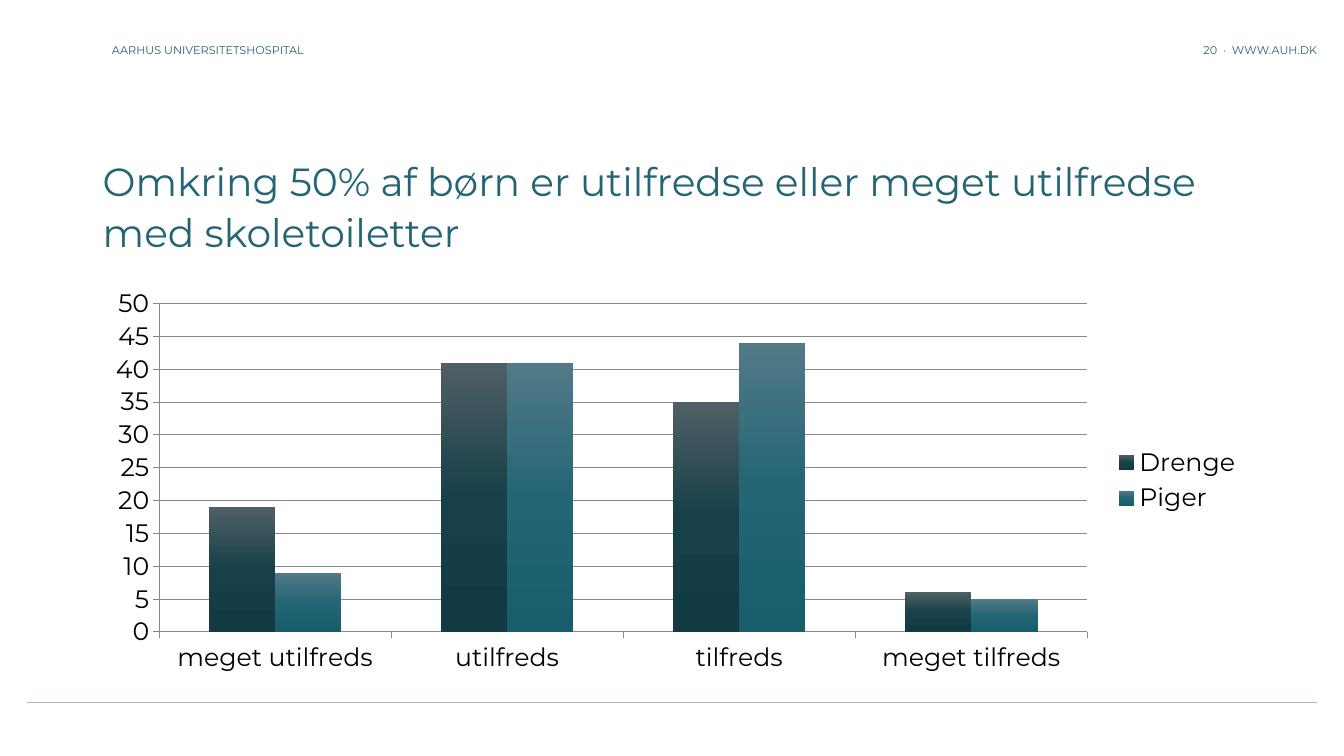
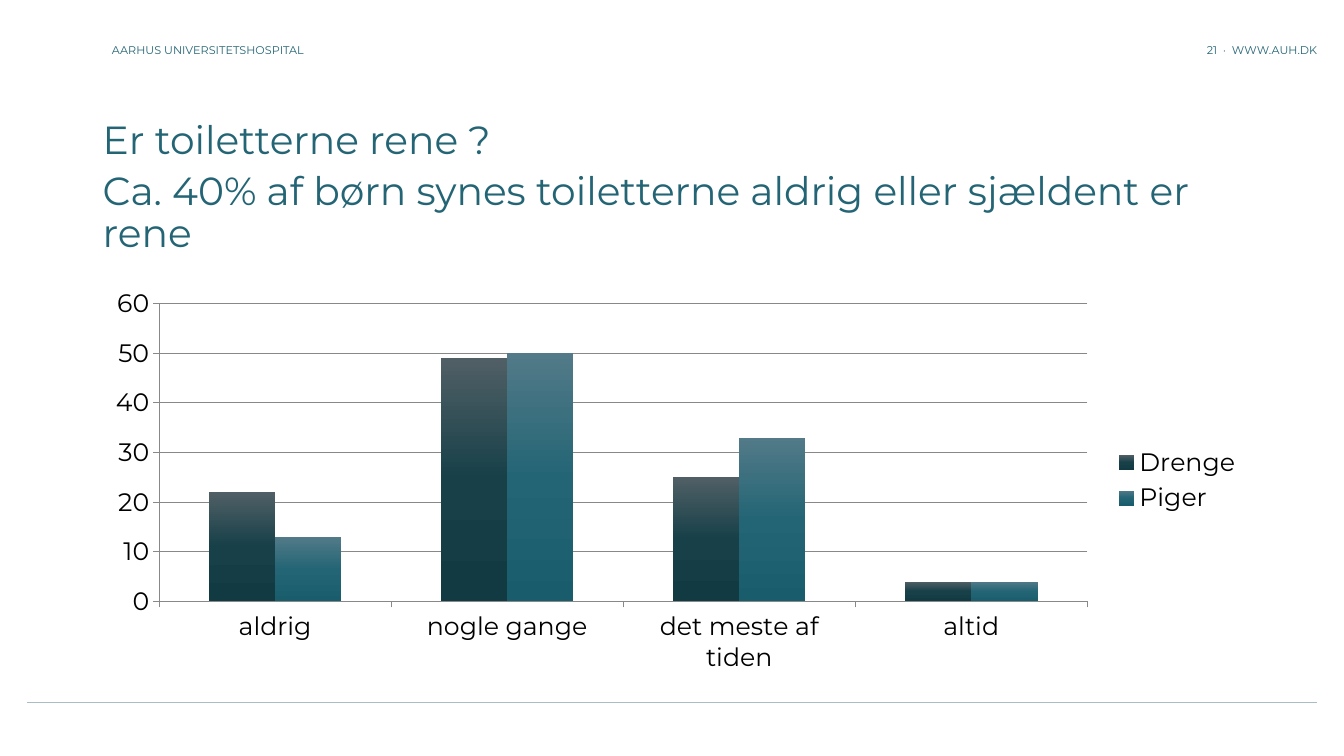
from lxml import etree
from pptx import Presentation
from pptx.chart.data import CategoryChartData
from pptx.dml.color import RGBColor
from pptx.enum.chart import XL_CHART_TYPE as ChartType, XL_LEGEND_POSITION as LegendPosition, XL_TICK_MARK as TickMark
from pptx.enum.shapes import MSO_CONNECTOR as Connector
from pptx.enum.text import MSO_ANCHOR as Anchor, MSO_AUTO_SIZE as AutoSize, PP_ALIGN as Align
from pptx.oxml import parse_xml
from pptx.oxml.ns import nsdecls, qn
from pptx.util import Pt

FONT = "Montserrat"
COLORS = {"teal": "246575", "rule": "A9BEC4", "grid": "888888", "text": "000000"}
GRADIENTS = {
    "Drenge": ("505F65", "174049", "113A43"),
    "Piger": ("527A88", "246575", "195D6C"),
}
SLIDES = [
    {
        "number": 20,
        "title": ["Omkring 50% af børn er utilfredse eller meget utilfredse",
                  "med skoletoiletter"],
        "categories": ["meget utilfreds", "utilfreds", "tilfreds", "meget tilfreds"],
        "values": {"Drenge": [19, 41, 35, 6], "Piger": [9, 41, 44, 5]},
        "maximum": 50,
        "step": 5,
    },
    {
        "number": 21,
        "title": ["Er toiletterne rene ?",
                  "Ca. 40% af børn synes toiletterne aldrig eller sjældent er rene"],
        "categories": ["aldrig", "nogle gange", "det meste af tiden", "altid"],
        "values": {"Drenge": [22, 49, 25, 4], "Piger": [13, 50, 33, 4]},
        "maximum": 60,
        "step": 10,
    },
]


def style_font(font, size, color):
    font.name = FONT
    font.size = Pt(size)
    font.bold = False
    font.color.rgb = RGBColor.from_string(COLORS[color])


def style_line(line, width, color):
    line.width = Pt(width)
    line.color.rgb = RGBColor.from_string(COLORS[color])


presentation = Presentation()
presentation.slide_width, presentation.slide_height = Pt(960), Pt(540)

for content in SLIDES:
    slide = presentation.slides.add_slide(presentation.slide_layouts[5])

    headers = [
        (697, 244, Align.RIGHT, f"{content['number']}  ·  WWW.AUH.DK"),
        (80, 320, Align.LEFT, "AARHUS UNIVERSITETSHOSPITAL"),
    ]
    for left, width, alignment, text in headers:
        frame = slide.shapes.add_textbox(Pt(left), 0, Pt(width), Pt(40.3)).text_frame
        frame.margin_left = frame.margin_right = frame.margin_top = frame.margin_bottom = 0
        frame.word_wrap = True
        frame.vertical_anchor = Anchor.BOTTOM
        paragraph = frame.paragraphs[0]
        paragraph.alignment = alignment
        run = paragraph.add_run()
        run.text = text
        style_font(run.font, 8, "teal")

    rule = slide.shapes.add_connector(Connector.STRAIGHT, Pt(19.4), Pt(501.8), Pt(941), Pt(501.8))
    style_line(rule.line, 0.5, "rule")
    etree.SubElement(rule._element.spPr, qn("a:effectLst"))

    title = slide.shapes.title
    title.left, title.top, title.width, title.height = Pt(66.2), Pt(82), Pt(828), Pt(104.4)
    frame = title.text_frame
    frame.word_wrap = True
    frame.auto_size = AutoSize.NONE
    frame.vertical_anchor = Anchor.BOTTOM
    for index, text in enumerate(content["title"]):
        paragraph = frame.add_paragraph() if index else frame.paragraphs[0]
        paragraph.alignment = Align.LEFT
        paragraph.line_spacing = 0.9
        paragraph.space_before = Pt(0)
        paragraph.space_after = Pt(6)
        run = paragraph.add_run()
        run.text = text
        style_font(run.font, 28, "teal")

    chart_data = CategoryChartData()
    chart_data.categories = content["categories"]
    for name, values in content["values"].items():
        chart_data.add_series(name, values)
    chart = slide.shapes.add_chart(
        ChartType.COLUMN_CLUSTERED, Pt(66.2), Pt(200.2), Pt(828), Pt(285.8), chart_data
    ).chart
    chart.has_title = False
    style_font(chart.font, 10, "text")
    chart.has_legend = True
    chart.legend.position = LegendPosition.RIGHT
    chart.legend.include_in_layout = False
    style_font(chart.legend.font, 18, "text")

    for axis in (chart.category_axis, chart.value_axis):
        axis.major_tick_mark = TickMark.OUTSIDE
        axis.minor_tick_mark = TickMark.NONE
        style_font(axis.tick_labels.font, 18, "text")
        style_line(axis.format.line, 0.75, "grid")
    value_axis = chart.value_axis
    value_axis.minimum_scale = 0
    value_axis.maximum_scale = content["maximum"]
    value_axis.major_unit = content["step"]
    value_axis.has_major_gridlines = True
    style_line(value_axis.major_gridlines.format.line, 0.75, "grid")

    plot = chart.plots[0]
    plot.gap_width = 150
    plot.overlap = 0
    plot.vary_by_categories = False
    for series in plot.series:
        series.invert_if_negative = False
        stops = "".join(
            f'<a:gs pos="{position}"><a:srgbClr val="{color}"/></a:gs>'
            for position, color in zip((0, 50000, 100000), GRADIENTS[series.name])
        )
        series._element.get_or_add_spPr().append(parse_xml(
            f'<a:gradFill {nsdecls("a")} rotWithShape="1"><a:gsLst>{stops}</a:gsLst>'
            '<a:lin ang="5400000" scaled="0"/></a:gradFill>'
        ))

presentation.save("out.pptx")
